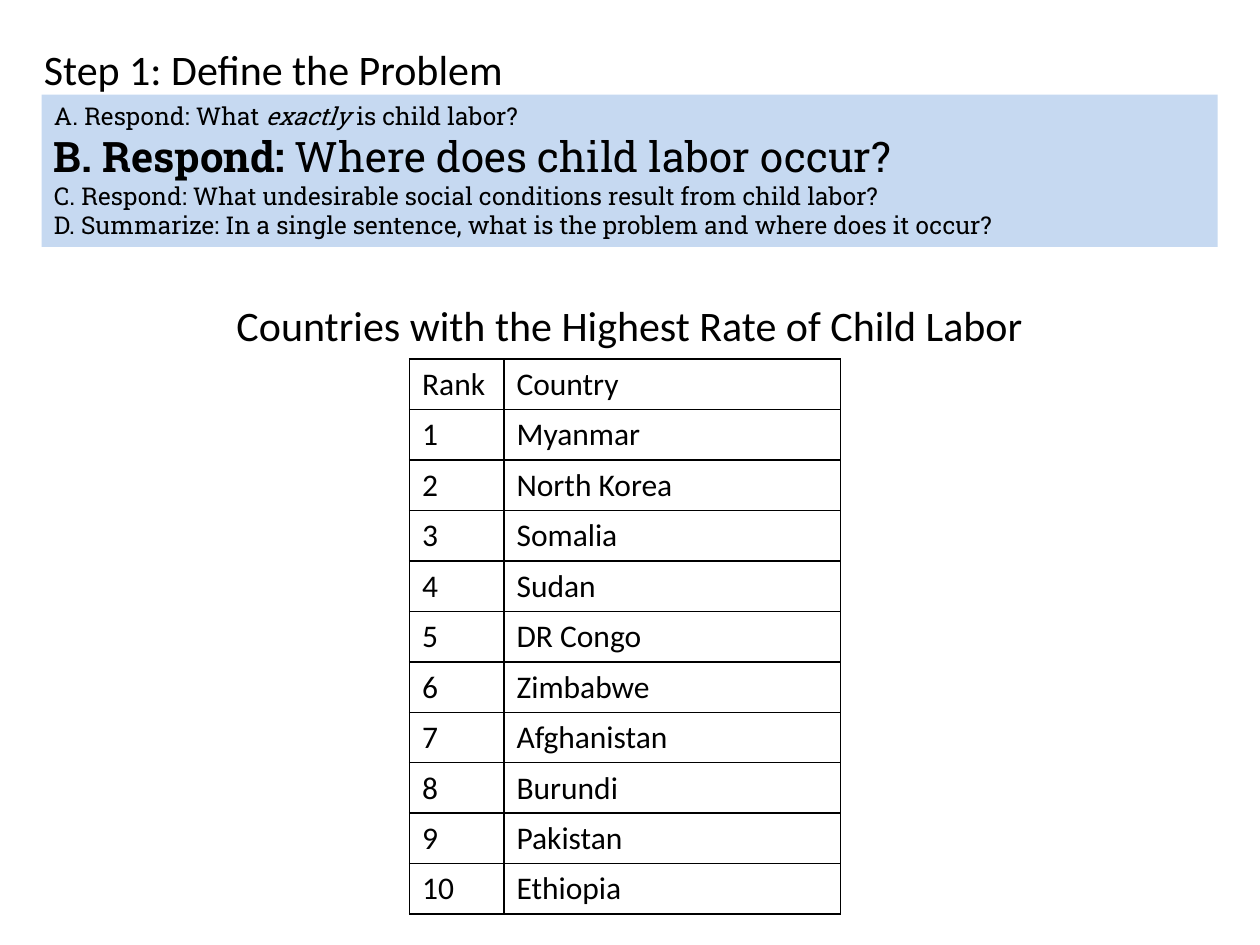
from lxml import etree
from pptx import Presentation
from pptx.dml.color import RGBColor
from pptx.enum import shapes, text
from pptx.oxml.ns import qn
from pptx.util import Pt

BLACK = RGBColor(0x00, 0x00, 0x00)
PALE_BLUE = RGBColor(0xC6, 0xD9, 0xF1)

# Content: each line is a list of (text, font settings)
BODY, SLAB = "Calibri", "Roboto Slab"
SMALL, LARGE = Pt(14), Pt(24)
TITLE = [[("Step 1: Define the Problem", {"size": LARGE})]]
CAPTION = [[("Countries with the Highest Rate of Child Labor", {"size": LARGE})]]
QUESTIONS = [
    [("A. Respond: What ", {"size": SMALL}),
     ("exactly ", {"size": SMALL, "italic": True}),
     ("is child labor?", {"size": SMALL})],
    [("B. Respond: ", {"size": LARGE, "bold": True}),
     ("Where does child labor occur?", {"size": LARGE})],
    [("C. Respond: What undesirable social conditions result from child labor?",
      {"size": SMALL})],
    [("D. Summarize: In a single sentence, what is the problem and where does it occur?",
      {"size": SMALL})],
]
COUNTRIES = ["Myanmar", "North Korea", "Somalia", "Sudan", "DR Congo", "Zimbabwe",
             "Afghanistan", "Burundi", "Pakistan", "Ethiopia"]
RANKING = [("Rank", "Country")] + [(str(i), name) for i, name in enumerate(COUNTRIES, 1)]

# Places in points: left, top, width, height
TITLE_AT = (18, 12.24, 689.76, 54)
QUESTIONS_AT = (23.76, 54, 672, 87.12)
CAPTION_AT = (41.76, 167.76, 636, 36)
TABLE_LEFT, TABLE_TOP = 234, 205.2
COLUMNS, ROW_HEIGHT = (54, 192.24), 28.8


def points(values):
    return [Pt(value) for value in values]


def write(frame, lines, font_name, align=text.PP_ALIGN.LEFT, anchor=text.MSO_ANCHOR.TOP):
    frame.word_wrap = True
    frame.vertical_anchor = anchor
    for index, line in enumerate(lines):
        paragraph = frame.add_paragraph() if index else frame.paragraphs[0]
        paragraph.alignment = align
        for words, settings in line:
            run = paragraph.add_run()
            run.text = words
            run.font.name = font_name
            run.font.color.rgb = BLACK
            for key, value in settings.items():
                setattr(run.font, key, value)


def add_borders(cell):
    properties = cell._tc.get_or_add_tcPr()
    for side in ("lnL", "lnR", "lnT", "lnB"):
        line = etree.SubElement(properties, qn("a:" + side), w=str(Pt(1)))
        fill = etree.SubElement(line, qn("a:solidFill"))
        etree.SubElement(fill, qn("a:srgbClr"), val=str(BLACK))


prs = Presentation()
prs.slide_width, prs.slide_height = Pt(720), Pt(540)
slide = prs.slides.add_slide(prs.slide_layouts[6])

# Title
title = slide.shapes.add_textbox(*points(TITLE_AT))
write(title.text_frame, TITLE, BODY, anchor=text.MSO_ANCHOR.MIDDLE)

# Question panel
panel = slide.shapes.add_shape(shapes.MSO_SHAPE.RECTANGLE, *points(QUESTIONS_AT))
panel.shadow.inherit = False
panel.fill.solid()
panel.fill.fore_color.rgb = PALE_BLUE
panel.line.fill.background()
write(panel.text_frame, QUESTIONS, SLAB)

# Ranking table
table = slide.shapes.add_table(
    len(RANKING), len(COLUMNS),
    *points((TABLE_LEFT, TABLE_TOP, sum(COLUMNS), ROW_HEIGHT * len(RANKING)))).table
table.first_row = table.horz_banding = False
for column, width in zip(table.columns, COLUMNS):
    column.width = Pt(width)
for row, entries in zip(table.rows, RANKING):
    row.height = Pt(ROW_HEIGHT)
    for cell, entry in zip(row.cells, entries):
        add_borders(cell)
        cell.fill.background()
        cell.vertical_anchor = text.MSO_ANCHOR.MIDDLE
        write(cell.text_frame, [[(entry, {"size": Pt(18)})]], BODY)

# Table caption
caption = slide.shapes.add_textbox(*points(CAPTION_AT))
write(caption.text_frame, CAPTION, BODY, align=text.PP_ALIGN.CENTER)

prs.save("out.pptx")
